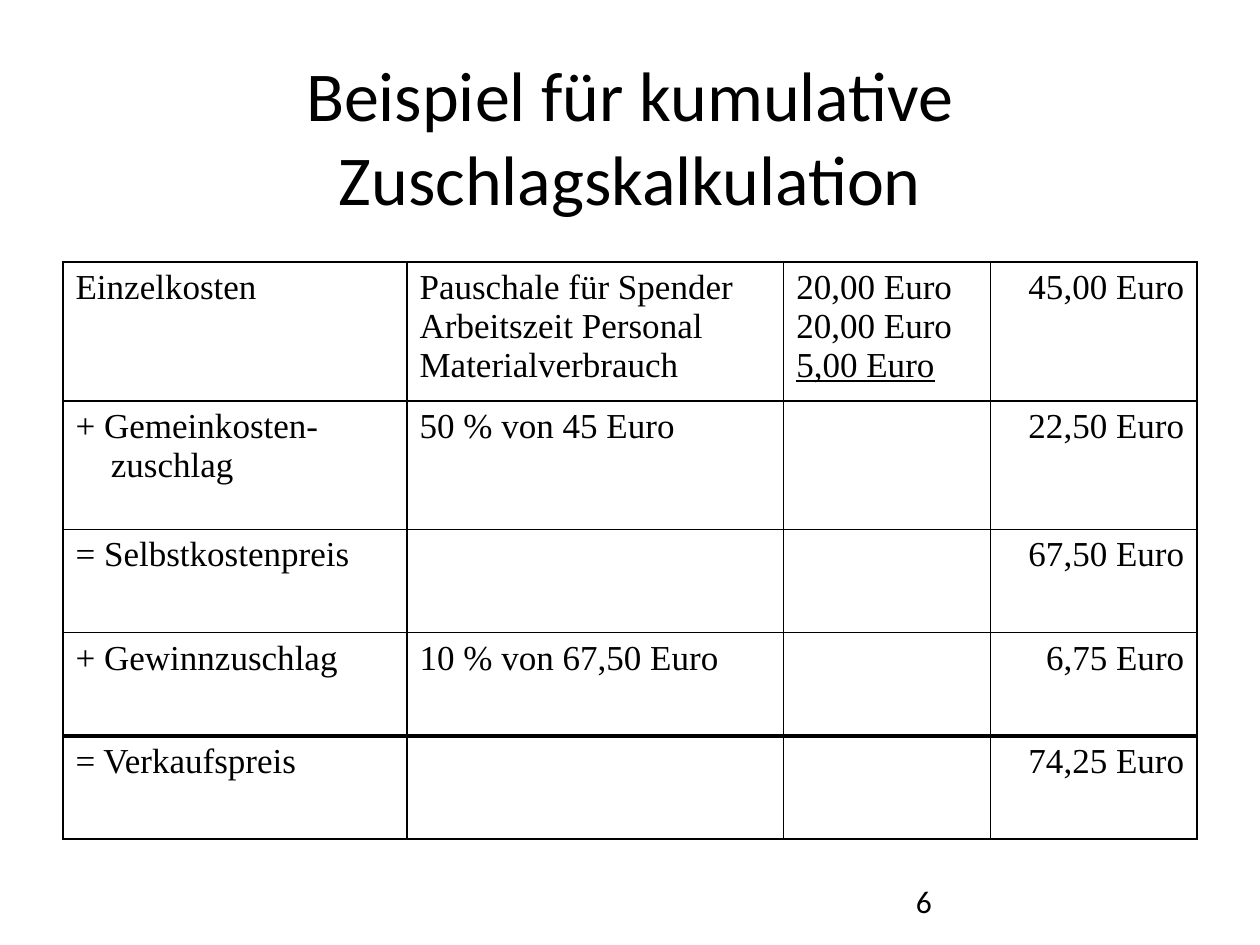
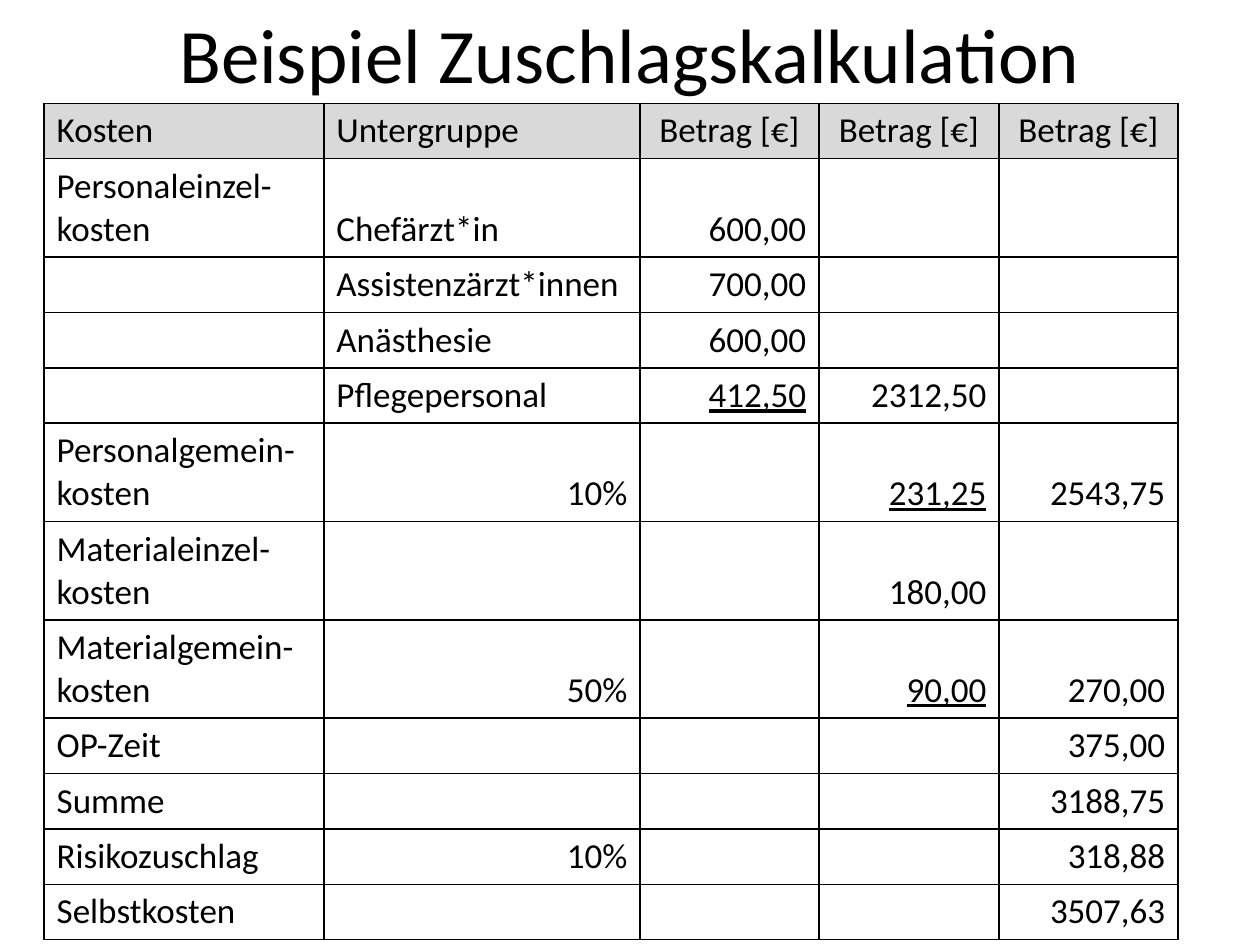
from dataclasses import dataclass

from lxml import etree
from pptx import Presentation
from pptx import util as u
from pptx.dml import color
from pptx.enum import text
from pptx.oxml import ns

LEFT, CENTER, RIGHT = text.PP_ALIGN.LEFT, text.PP_ALIGN.CENTER, text.PP_ALIGN.RIGHT
TOP, MIDDLE, BOTTOM = text.MSO_ANCHOR.TOP, text.MSO_ANCHOR.MIDDLE, text.MSO_ANCHOR.BOTTOM


@dataclass(frozen=True)
class Theme:
    """Colours, fonts, type sizes and line widths of the deck."""
    ink: str = "000000"
    paper: str = "FFFFFF"
    header: str = "D9D9D9"
    sans: str = "Calibri"
    serif: str = "Times New Roman"
    body: int = 20
    number: int = 18
    thin: float = 1
    thick: float = 2.25
    hang: float = 0.28


T = Theme()

SURCHARGE_ROWS = [
    ["Einzelkosten", "Pauschale für Spender\nArbeitszeit Personal\nMaterialverbrauch",
     "20,00 Euro\n20,00 Euro\n_5,00 Euro", "45,00 Euro"],
    ["+ Gemeinkosten-\n>zuschlag", "50 % von 45 Euro", "", "22,50 Euro"],
    ["= Selbstkostenpreis", "", "", "67,50 Euro"],
    ["+ Gewinnzuschlag", "10 % von 67,50 Euro", "", "6,75 Euro"],
    ["= Verkaufspreis", "", "", "74,25 Euro"],
]

COST_ROWS = [
    ["Kosten", "Untergruppe", "Betrag [€]", "Betrag [€]", "Betrag [€]"],
    ["Personaleinzel-kosten", "Chefärzt*in", "600,00", "", ""],
    ["", "Assistenzärzt*innen", "700,00", "", ""],
    ["", "Anästhesie", "600,00", "", ""],
    ["", "Pflegepersonal", "_412,50", "2312,50", ""],
    ["Personalgemein-kosten", "10%", "", "_231,25", "2543,75"],
    ["Materialeinzel-kosten", "", "", "180,00", ""],
    ["Materialgemein-kosten", "50%", "", "_90,00", "270,00"],
    ["OP-Zeit", "", "", "", "375,00"],
    ["Summe", "", "", "", "3188,75"],
    ["Risikozuschlag", "10%", "", "", "318,88"],
    ["Selbstkosten", "", "", "", "3507,63"],
]


def write(tf, content, *, size, font=T.sans, align=LEFT):
    """Write lines into a frame; a leading _ underlines and > indents a line."""
    for i, line in enumerate(content.split("\n")):
        p = tf.paragraphs[0] if i == 0 else tf.add_paragraph()
        p.alignment = align
        if line.startswith(">"):
            p._p.get_or_add_pPr().set("marL", str(u.Inches(T.hang)))
        r = p.add_run()
        r.text = line.lstrip("_>")
        r.font.name, r.font.size = font, u.Pt(size)
        r.font.underline = line.startswith("_")
        r.font.color.rgb = color.RGBColor.from_string(T.ink)


def add_text(s, box, content, anchor=TOP, **style):
    """Add a wrapping text box at left, top, width, height in inches."""
    tf = s.shapes.add_textbox(*map(u.Inches, box)).text_frame
    tf.word_wrap, tf.vertical_anchor = True, anchor
    write(tf, content, **style)


def add_title(s, box, content, size):
    """Add a centred slide title."""
    add_text(s, box, content, anchor=MIDDLE, size=size, align=CENTER)


def set_borders(cell, top, bottom):
    """Draw the four cell borders with the given top and bottom widths."""
    tc_pr = cell._tc.get_or_add_tcPr()
    for side, width in zip("LRTB", (T.thin, T.thin, top, bottom)):
        ln = etree.SubElement(tc_pr, ns.qn(f"a:ln{side}"), w=str(u.Pt(width)))
        fill = etree.SubElement(ln, ns.qn("a:solidFill"))
        etree.SubElement(fill, ns.qn("a:srgbClr"), val=T.ink)


def add_grid(s, corner, cols, heights, rows, align, anchor=TOP, font=T.sans,
             header=False, thick_above=None):
    """Add a bordered table whose alignment follows align(row, col, value)."""
    size = (sum(cols), sum(heights))
    tbl = s.shapes.add_table(len(rows), len(cols), *map(u.Inches, corner + size)).table
    tbl.first_row = tbl.horz_banding = False
    for col, width in zip(tbl.columns, cols):
        col.width = u.Inches(width)
    for i, (row, height) in enumerate(zip(rows, heights)):
        tbl.rows[i].height = u.Inches(height)
        top, bottom = (T.thick if n == thick_above else T.thin for n in (i, i + 1))
        for j, value in enumerate(row):
            cell = tbl.cell(i, j)
            set_borders(cell, top, bottom)
            cell.fill.solid()
            shade = T.header if header and i == 0 else T.paper
            cell.fill.fore_color.rgb = color.RGBColor.from_string(shade)
            cell.vertical_anchor = anchor
            if value:
                write(cell.text_frame, value, size=T.body, font=font, align=align(i, j, value))


def align_surcharge(row, col, value):
    """Set the totals column flush right."""
    return RIGHT if col == 3 else LEFT


def align_cost(row, col, value):
    """Centre amount headings and set figures flush right."""
    if row == 0:
        return CENTER if col > 1 else LEFT
    return RIGHT if value[-1] in "0123456789%" else LEFT


def surcharge_slide(s):
    """Build the cumulative surcharge example."""
    add_title(s, (0.5, 0.32, 9, 1.51), "Beispiel für kumulative Zuschlagskalkulation", 40)
    add_grid(s, (0.5, 2.08), (2.73, 2.99, 1.64, 1.64), [1.02] * 2 + [0.82] * 3,
             SURCHARGE_ROWS, align_surcharge, font=T.serif, thick_above=4)
    add_text(s, (7.17, 6.95, 2.33, 0.4), "6", size=T.number)


def cost_slide(s):
    """Build the detailed cost example."""
    add_title(s, (0.5, 0, 9, 0.84), "Beispiel Zuschlagskalkulation", 44)
    heights = [0.78 if "-kosten" in row[0] else 0.44 for row in COST_ROWS]
    add_grid(s, (0.35, 0.82), (2.22, 2.51, 1.42, 1.43, 1.42), heights,
             COST_ROWS, align_cost, anchor=BOTTOM, header=True)


def main():
    """Build and save the deck."""
    prs = Presentation()
    prs.slide_width, prs.slide_height = u.Inches(10), u.Inches(7.5)
    for build in (surcharge_slide, cost_slide):
        build(prs.slides.add_slide(prs.slide_layouts[6]))
    prs.save("out.pptx")


if __name__ == "__main__":
    main()
